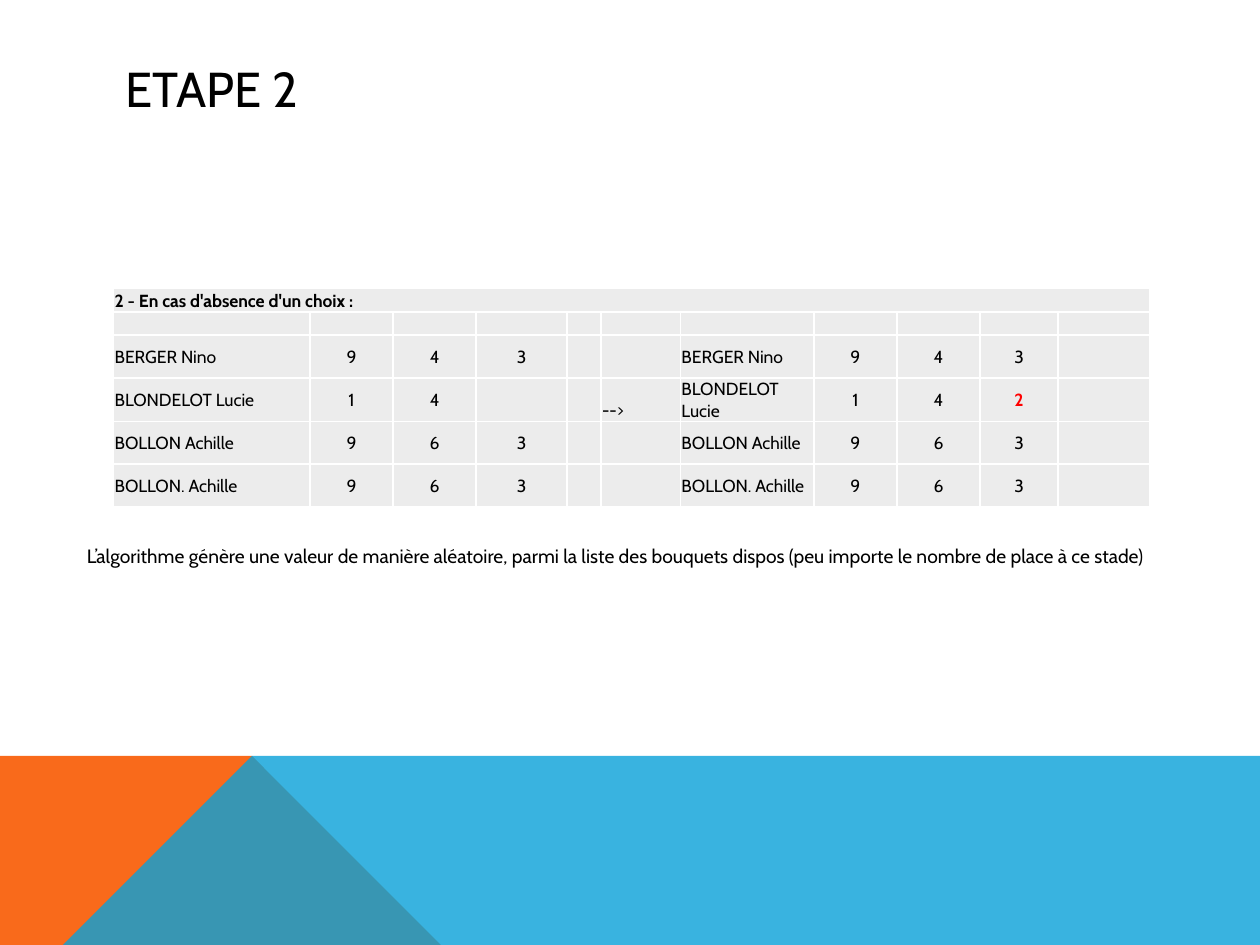
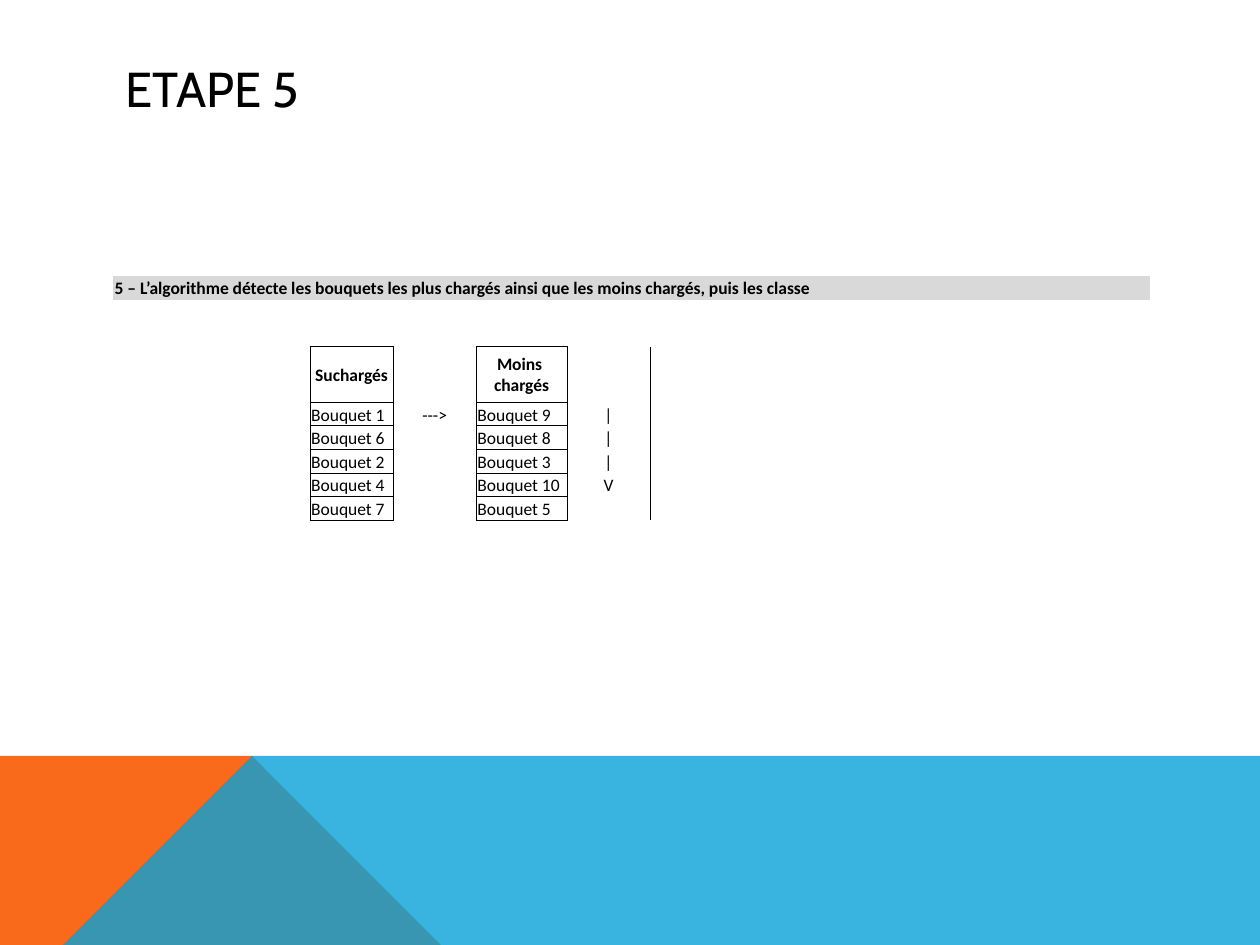
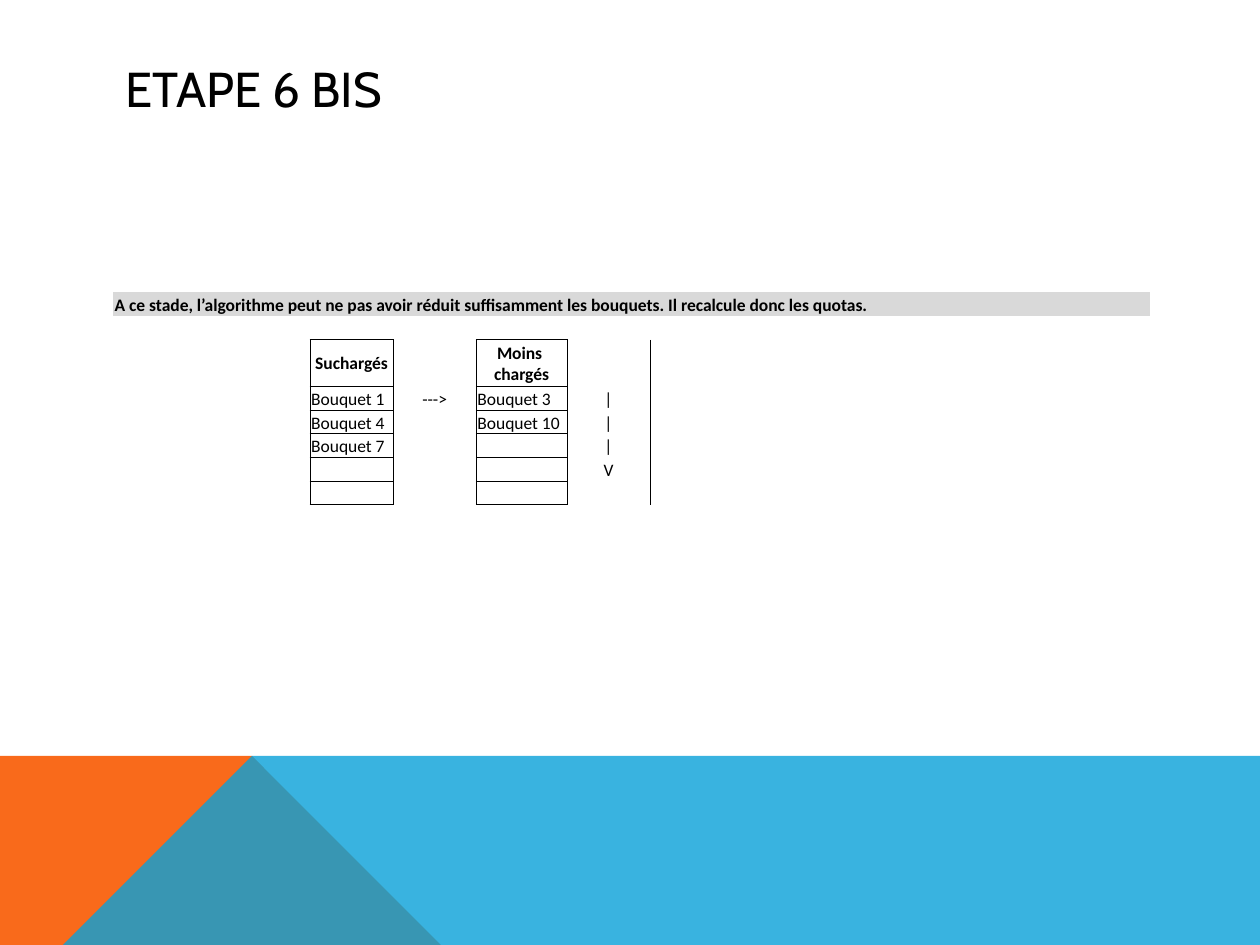
from lxml.etree import SubElement
from pptx import Presentation
from pptx.dml.color import RGBColor
from pptx.enum.text import MSO_ANCHOR, PP_ALIGN
from pptx.oxml.ns import qn
from pptx.oxml.xmlchemy import OxmlElement
from pptx.util import Inches, Pt

BLACK, WHITE, RED = "000000", "FFFFFF", "FF0000"
ORANGE, BLUE = "F96A1B", "08A1D9"
PALE_GREY, GREY = "ECECEC", "D9D9D9"
TITLE_FONT, LIST_FONT = "Cabin", "Calibri"
TABLE_SIZE = 10
NO_TABLE_STYLE = "{2D5ABB26-0587-4C30-8999-92F81FD0307C}"

# Bands at the foot of every slide: outline, colour, opacity in percent
BANDS = [
    ([(0, 7.5), (0, 5.52), (2.23, 5.52), (3.91, 7.5)], ORANGE, 100),
    ([(0, 7.5), (2.23, 5.52), (10, 5.53), (10, 7.5)], BLUE, 80),
]

# Cell styles: alignment, anchor, bold, colour
LEFT, CENTER = PP_ALIGN.LEFT, PP_ALIGN.CENTER
MIDDLE, BOTTOM = MSO_ANCHOR.MIDDLE, MSO_ANCHOR.BOTTOM
STYLES = {
    "heading": (LEFT, MIDDLE, True, BLACK),
    "low heading": (LEFT, BOTTOM, True, BLACK),
    "label": (CENTER, MIDDLE, True, BLACK),
    "name": (LEFT, MIDDLE, False, BLACK),
    "choice": (CENTER, MIDDLE, False, BLACK),
    "drawn choice": (CENTER, MIDDLE, True, RED),
    "arrow": (LEFT, BOTTOM, False, BLACK),
    "bouquet": (LEFT, BOTTOM, False, BLACK),
    "mark": (CENTER, BOTTOM, False, BLACK),
}

# Step 2: each student's choices before and after the draw
CHOICES_HEADING = "2 - En cas d'absence d'un choix :"
STUDENTS = [
    ("BERGER Nino", "943", "943"),
    ("BLONDELOT Lucie", "14", "142"),
    ("BOLLON Achille", "963", "963"),
    ("BOLLON. Achille", "963", "963"),
]
CHOICES_NOTE = ("L’algorithme génère une valeur de manière aléatoire, parmi la liste des "
                "bouquets dispos (peu importe le nombre de place à ce stade)")
CHOICE_COLUMNS = [1.56, 0.66, 0.66, 0.72, 0.27, 0.63, 1.06, 0.66, 0.66, 0.62, 0.73]

# Steps 5 and 6 bis: overloaded and least loaded bouquets
LOAD_LABELS = ("Suchargés", "Moins \nchargés")
LOAD_ROWS = 5
DOWN_ARROW = "|||V"
LOAD_COLUMNS = [1.56, 0.66, 0.66, 0.72, 0.66, 0.66, 0.64, 0.66, 0.66, 0.62, 0.73]
LOAD_SLIDES = [
    {"title": "ETAPE 5",
     "heading": "5 – L’algorithme détecte les bouquets les plus chargés ainsi que "
                "les moins chargés, puis les classe",
     "bouquets": ([1, 6, 2, 4, 7], [9, 8, 3, 10, 5]),
     "top": 2.19, "height": 1.94, "label_row": 3, "label_height": 0.44},
    {"title": "ETAPE 6 BIS",
     "heading": "A ce stade, l’algorithme peut ne pas avoir réduit suffisamment les "
                "bouquets. Il recalcule donc les quotas.",
     "bouquets": ([1, 4, 7], [3, 10]),
     "top": 2.32, "height": 1.69, "label_row": 2, "label_height": 0.37},
]


def rgb(color):
    return RGBColor.from_string(color)


def set_all(target, values):
    for name, value in values.items():
        setattr(target, name, value)


def format_font(font, name, size, color=BLACK, bold=False):
    set_all(font, {"name": name, "size": Pt(size), "bold": bold})
    font.color.rgb = rgb(color)


def add_text(slide, text, box, size, **frame_format):
    shape = slide.shapes.add_textbox(*map(Inches, box))
    set_all(shape.text_frame, frame_format)
    run = shape.text_frame.paragraphs[0].add_run()
    run.text = text
    format_font(run.font, TITLE_FONT, size)


def add_band(slide, points, color, opacity):
    builder = slide.shapes.build_freeform(*points[0], scale=Inches(1))
    builder.add_line_segments(points[1:], close=True)
    shape = builder.convert_to_shape()
    shape.shadow.inherit = False
    shape.line.fill.background()
    shape.fill.solid()
    shape.fill.fore_color.rgb = rgb(color)
    if opacity < 100:
        fill_color = next(shape.element.iter(qn("a:srgbClr")))
        SubElement(fill_color, qn("a:alpha"), val=str(opacity * 1000))


def add_step_slide(presentation, title):
    slide = presentation.slides.add_slide(presentation.slide_layouts[6])
    for band in BANDS:
        add_band(slide, *band)
    add_text(slide, title, (0.9, 0.4, 8.22, 0.6), 28,
             word_wrap=True, vertical_anchor=MIDDLE)
    return slide


def write_cell(cell, text, style, font_name):
    align, anchor, bold, color = STYLES[style]
    set_all(cell, {"margin_left": Inches(0.01), "margin_right": Inches(0.01),
                   "margin_top": Inches(0.01), "margin_bottom": 0,
                   "vertical_anchor": anchor})
    paragraph = cell.text_frame.paragraphs[0]
    paragraph.text = text
    paragraph.alignment = align
    for run in paragraph.runs:
        format_font(run.font, font_name, TABLE_SIZE, color, bold)
    # Line breaks and empty cells take the table's text size too
    size = str(TABLE_SIZE * 100)
    for line_break in paragraph._p.findall(qn("a:br")):
        SubElement(line_break, qn("a:rPr"), sz=size)
    if not text:
        SubElement(paragraph._p, qn("a:endParaRPr"), sz=size)


def add_borders(cell, sides, color, width):
    properties = cell._tc.get_or_add_tcPr()
    for index, side in enumerate(sides):
        line = OxmlElement(f"a:ln{side}")
        line.set("w", str(Pt(width)))
        fill = SubElement(line, qn("a:solidFill"))
        SubElement(fill, qn("a:srgbClr"), val=color)
        properties.insert(index, line)


def add_grid(slide, top, height, columns, row_count, tall_rows, texts,
             font_name, fills, boxed, border):
    """Rows not in tall_rows share the remaining height equally."""
    frame = slide.shapes.add_table(row_count, len(columns), Inches(0.9), Inches(top),
                                   Inches(sum(columns)), Inches(height))
    table = frame.table
    set_all(table, {"first_row": False, "horz_banding": False})
    next(frame.element.iter(qn("a:tableStyleId"))).text = NO_TABLE_STYLE
    for column, width in zip(table.columns, columns):
        column.width = Inches(width)
    low_height = (height - sum(tall_rows.values())) / (row_count - len(tall_rows))
    for index, row in enumerate(table.rows):
        row.height = Inches(tall_rows.get(index, low_height))
    table.cell(0, 0).merge(table.cell(0, len(columns) - 1))

    for row in range(row_count):
        for column in range(len(columns)):
            cell = table.cell(row, column)
            text, style = texts.get((row, column), ("", "bouquet"))
            write_cell(cell, text, style, font_name)
            if row in fills:
                cell.fill.solid()
                cell.fill.fore_color.rgb = rgb(fills[row])
            else:
                cell.fill.background()
            # A side is drawn when the cell on either side of it is boxed
            neighbours = {"L": (row, column - 1), "R": (row, column + 1),
                          "T": (row - 1, column), "B": (row + 1, column)}
            sides = [side for side, neighbour in neighbours.items()
                     if (row, column) in boxed or neighbour in boxed]
            add_borders(cell, sides, *border)


def build_choices_slide(presentation):
    slide = add_step_slide(presentation, "ETAPE 2")
    first_row, after_column = 2, 6
    row_count = first_row + len(STUDENTS)
    texts = {(0, 0): (CHOICES_HEADING, "heading")}
    for row, (name, before, after) in enumerate(STUDENTS, first_row):
        for start, choices in ((0, before), (after_column, after)):
            texts[row, start] = (name, "name")
            for index, choice in enumerate(choices):
                drawn = index >= len(before)
                texts[row, start + 1 + index] = (choice, "drawn choice" if drawn else "choice")
        if before != after:
            texts[row, after_column - 1] = ("-->", "arrow")
    every_cell = {(row, column) for row in range(row_count)
                  for column in range(len(CHOICE_COLUMNS))}
    add_grid(slide, 2.29, 1.73, CHOICE_COLUMNS, row_count,
             dict.fromkeys(range(first_row, row_count), 0.34), texts, TITLE_FONT,
             dict.fromkeys(range(row_count), PALE_GREY), every_cell, (WHITE, 1))
    add_text(slide, CHOICES_NOTE, (0.59, 4.27, 8.78, 0.29), 11, word_wrap=False)


def build_load_slide(presentation, content):
    slide = add_step_slide(presentation, content["title"])
    label_row = content["label_row"]
    first_row = label_row + 1
    row_count = first_row + LOAD_ROWS
    texts = {(0, 0): (content["heading"], "low heading"),
             (first_row, 2): ("--->", "mark")}
    for column, label, bouquets in zip((1, 3), LOAD_LABELS, content["bouquets"]):
        texts[label_row, column] = (label, "label")
        for row, number in enumerate(bouquets, first_row):
            texts[row, column] = (f"Bouquet {number}", "bouquet")
    for row, mark in enumerate(DOWN_ARROW, first_row):
        texts[row, 4] = (mark, "mark")
    boxed = {(row, column) for row in range(label_row, row_count) for column in (1, 3)}
    add_grid(slide, content["top"], content["height"], LOAD_COLUMNS, row_count,
             {label_row: content["label_height"]}, texts, LIST_FONT,
             {0: GREY}, boxed, (BLACK, 0.5))


def main():
    presentation = Presentation()
    set_all(presentation, {"slide_width": Inches(10), "slide_height": Inches(7.5)})
    build_choices_slide(presentation)
    for content in LOAD_SLIDES:
        build_load_slide(presentation, content)
    presentation.save("out.pptx")


if __name__ == "__main__":
    main()
